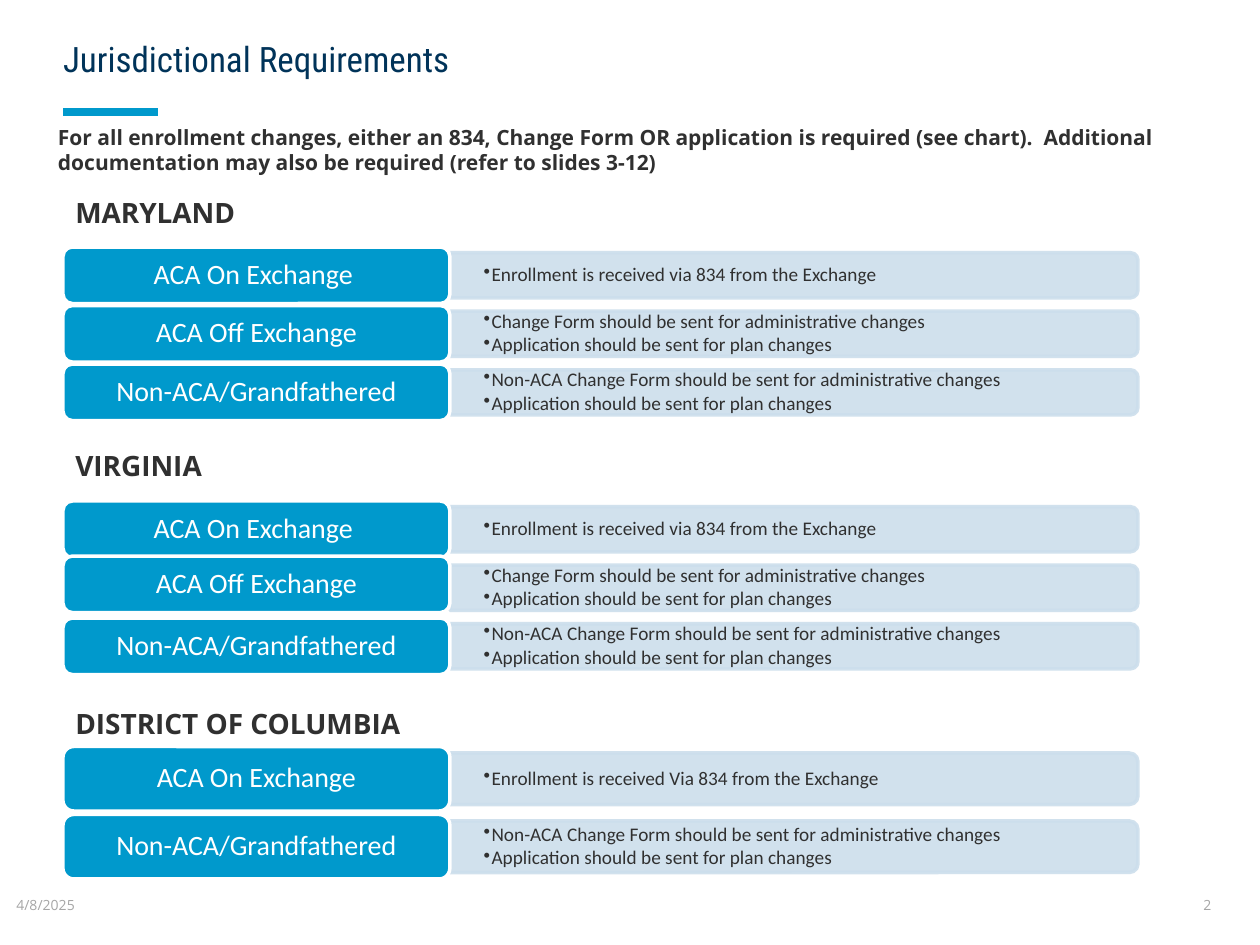
"""Build the Jurisdictional Requirements slide."""
from dataclasses import dataclass

from lxml.etree import SubElement
from pptx import Presentation
from pptx.dml.color import RGBColor
from pptx.enum.shapes import MSO_CONNECTOR as Connector, MSO_SHAPE as Shape
from pptx.enum.text import MSO_ANCHOR as Anchor, PP_ALIGN as Align
from pptx.oxml.ns import qn
from pptx.util import Cm, Pt


@dataclass(frozen=True)
class Theme:
    navy: RGBColor = RGBColor.from_string("003359")
    blue: RGBColor = RGBColor.from_string("0099CC")
    pale: RGBColor = RGBColor.from_string("CCDEEC")
    ink: RGBColor = RGBColor.from_string("303030")
    gray: RGBColor = RGBColor.from_string("A6A6A6")
    white: RGBColor = RGBColor.from_string("FFFFFF")
    title_font: str = "Roboto Condensed"
    text_font: str = "Open Sans"
    chart_font: str = "Calibri"
    title_size: Pt = Pt(20)
    heading_size: Pt = Pt(16)
    intro_size: Pt = Pt(12)
    detail_size: Pt = Pt(11)
    footer_size: Pt = Pt(8)


theme = Theme()


def set_font(paragraph, name, size, color, bold=False):
    font = paragraph.font
    font.name, font.size, font.bold = name, size, bold
    font.color.rgb = color


def add_text(slide, text, box, size, color, bold=False, wrap=True):
    shape = slide.shapes.add_textbox(*map(Cm, box))
    frame = shape.text_frame
    frame.word_wrap = wrap
    frame.text = text
    set_font(frame.paragraphs[0], theme.text_font, size, color, bold)
    return frame


ON, OFF, NON_ACA = "ACA On Exchange", "ACA Off Exchange", "Non-ACA/Grandfathered"
RECEIVED = "Enrollment is received via 834 from the Exchange"
CHANGE = "Change Form should be sent for administrative changes"
APPLICATION = "Application should be sent for plan changes"
off_row = (OFF, [CHANGE, APPLICATION], 0)
non_aca_row = (NON_ACA, [f"Non-ACA {CHANGE}", APPLICATION], 0)
on_row = (f"{ON} ", [RECEIVED], 0)
raised_off_row = (OFF, [CHANGE, APPLICATION], -0.07)
dc_on_row = (ON, [RECEIVED.replace("via", "Via")], 0)

sections = [
    ("MARYLAND", 3.81, 3.78, 5.55, 1.18, 1.14, 0.91, [on_row, off_row, non_aca_row]),
    ("VIRGINIA", 8.92, 3.1, 10.67, 1.18, 1.14, 0.91, [on_row, raised_off_row, non_aca_row]),
    ("DISTRICT OF COLUMBIA", 14.12, 7.14, 15.7, 1.37, 1.3, 1.04, [dc_on_row, non_aca_row]),
]
LEFT, LABEL_WIDTH = 1.27, 7.8
BAR_LEFT, BAR_LENGTH = LEFT + LABEL_WIDTH, 13.87

presentation = Presentation()
presentation.slide_width, presentation.slide_height = Cm(25.4), Cm(19.05)
slide = presentation.slides.add_slide(presentation.slide_layouts[5])

title = slide.shapes.title
title.left, title.top, title.width, title.height = Cm(LEFT), Cm(0), Cm(17.15), Cm(2.21)
frame = title.text_frame
frame.text = "Jurisdictional Requirements"
frame.vertical_anchor = Anchor.MIDDLE
frame.margin_left = frame.margin_right = 0
frame.margin_top, frame.margin_bottom = Cm(0.76), Cm(0.51)
paragraph = frame.paragraphs[0]
paragraph.alignment = Align.LEFT
paragraph.line_spacing = 0.9
set_font(paragraph, theme.title_font, theme.title_size, theme.navy)

accent = slide.shapes.add_connector(Connector.STRAIGHT, Cm(LEFT), Cm(2.26), Cm(3.18), Cm(2.26))
accent.line.color.rgb = theme.blue
accent.line.width = Pt(4.5)
SubElement(accent.element.spPr, qn("a:effectLst"))

add_text(
    slide,
    "For all enrollment changes, either an 834, Change Form OR application is required "
    "(see chart).  Additional documentation may also be required (refer to slides 3-12)",
    (0.92, 2.39, 23.7, 1.27), theme.intro_size, theme.ink, bold=True,
)

for text, left, width, wrap in [("4/8/2025", 0.33, 1.85, False), ("2", 24.26, 0.69, True)]:
    frame = add_text(slide, text, (left, 17.73, width, 1.02), theme.footer_size, theme.gray, wrap=wrap)
    frame.vertical_anchor = Anchor.MIDDLE
    frame.margin_left = frame.margin_right = 0

for heading, heading_top, heading_width, first_middle, pitch, label_height, bar_height, rows in sections:
    add_text(slide, heading, (LEFT, heading_top, heading_width, 0.94),
             theme.heading_size, theme.ink, bold=True, wrap=False)
    for index, (label_text, details, label_shift) in enumerate(rows):
        middle = first_middle + index * pitch

        bar = slide.shapes.add_shape(
            Shape.ROUND_2_SAME_RECTANGLE,
            Cm(BAR_LEFT + (BAR_LENGTH - bar_height) / 2), Cm(middle - BAR_LENGTH / 2),
            Cm(bar_height), Cm(BAR_LENGTH))
        bar.rotation = 90
        bar.shadow.inherit = False
        bar.fill.solid()
        bar.fill.fore_color.rgb = theme.pale
        bar.line.color.rgb = theme.pale
        bar.line.width = Pt(2)
        for color in bar.element.spPr.iter(qn("a:srgbClr")):
            SubElement(color, qn("a:alpha"), val="90000")

        box = slide.shapes.add_textbox(Cm(BAR_LEFT), Cm(middle - bar_height / 2),
                                       Cm(BAR_LENGTH), Cm(bar_height))
        frame = box.text_frame
        frame.word_wrap = True
        frame.vertical_anchor = Anchor.MIDDLE
        frame.margin_left = frame.margin_right = Cm(0.68)
        frame.margin_top = frame.margin_bottom = 0
        frame.text = "\n".join(details)
        for paragraph in frame.paragraphs:
            paragraph.level = 1
            paragraph.line_spacing = 0.9
            paragraph.space_after = Pt(1.65)
            properties = paragraph._p.get_or_add_pPr()
            properties.set("marL", str(Cm(0.16)))
            properties.set("indent", str(-Cm(0.16)))
            SubElement(properties, qn("a:buChar"), char="•")
            set_font(paragraph, theme.chart_font, theme.detail_size, theme.ink)

        label = slide.shapes.add_shape(
            Shape.ROUNDED_RECTANGLE, Cm(LEFT), Cm(middle + label_shift - label_height / 2),
            Cm(LABEL_WIDTH), Cm(label_height))
        label.shadow.inherit = False
        label.fill.solid()
        label.fill.fore_color.rgb = theme.blue
        label.line.color.rgb = theme.white
        label.line.width = Pt(2)
        frame = label.text_frame
        frame.margin_top = frame.margin_bottom = Cm(0.08)
        frame.vertical_anchor = Anchor.MIDDLE
        frame.text = label_text
        paragraph = frame.paragraphs[0]
        paragraph.alignment = Align.CENTER
        paragraph.line_spacing = 0.9
        set_font(paragraph, theme.chart_font, theme.heading_size, theme.white)

presentation.save("out.pptx")
